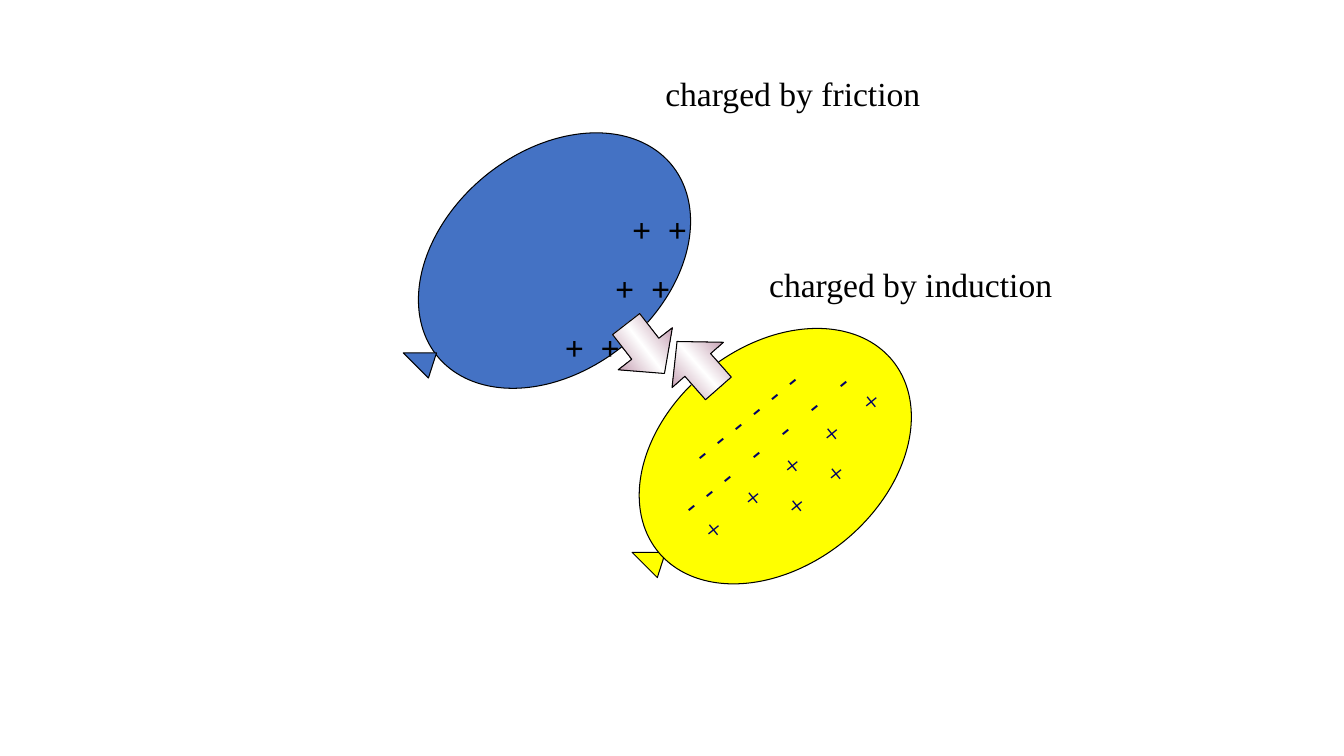
from copy import deepcopy
from pptx import Presentation
from pptx.dml.color import RGBColor
from pptx.enum.shapes import MSO_SHAPE
from pptx.enum.text import MSO_ANCHOR, PP_ALIGN
from pptx.util import Inches, Pt

OVAL, ARROW = MSO_SHAPE.OVAL, MSO_SHAPE.RIGHT_ARROW
MIDDLE, CENTER = MSO_ANCHOR.MIDDLE, PP_ALIGN.CENTER
FACE = "Times New Roman"
BLUE, YELLOW, BLACK, NAVY = "4472C4", "FFFF00", "000000", "000066"
MAUVE, WHITE = "954F72", "FFFFFF"
SIZE = 3, 2.17
TILT = 320.8

# Rows hold (text, letter spacing) runs and a left indent, in points.
PLUSES = [([("+ +", 3)], indent) for indent in (72, 60, 24)]
INDUCED = [
    ([("- - - - - -", 2.5)], 2.5),
    ([("- - ", 2.5), ("- - - - -", 7.5)], 0),
    ([("+ + + + +", 10)], 10),
    ([("+ +", 10)], 15),
]


def color(code):
    return RGBColor.from_string(code)


def outline(shape):
    shape.shadow.inherit = False
    shape.line.color.rgb = color(BLACK)
    shape.line.width = Pt(0.75)


def paint(shape, code):
    outline(shape)
    shape.fill.solid()
    shape.fill.fore_color.rgb = color(code)


def write(frame, rows, size, code, bold=False, gap=0, align=None):
    for i, (runs, indent) in enumerate(rows):
        para = frame.add_paragraph() if i else frame.paragraphs[0]
        para.font.size, para.font.name = Pt(size), FACE
        para.font.bold, para.font.color.rgb = bold, color(code)
        para.alignment = align
        if i and gap:
            para.space_before = Pt(gap)
        props = para._p.get_or_add_pPr()
        props.set("marL", str(Pt(indent)))
        props.set("indent", "0")
        for text, space in runs:
            run = para.add_run()
            run.text = text
            if space:
                run._r.get_or_add_rPr().set("spc", str(int(space * 100)))


def note(slide, box, rows, **style):
    frame = slide.shapes.add_textbox(*map(Inches, box)).text_frame
    frame.word_wrap = True
    write(frame, rows, 24, BLACK, **style)


def knot(slide, left, top, code):
    pen = slide.shapes.build_freeform(
        Inches(left + 0.33), Inches(top), scale=1.0)
    pen.add_line_segments(
        [(Inches(left), Inches(top)), (Inches(left + 0.25), Inches(top + 0.25))],
        close=True)
    paint(pen.convert_to_shape(), code)


def balloon(slide, left, top, code):
    body = slide.shapes.add_shape(OVAL, *map(Inches, (left, top, *SIZE)))
    body.rotation = TILT
    paint(body, code)
    return body


def arrow(slide, left, top, turn):
    shape = slide.shapes.add_shape(
        ARROW, *map(Inches, (left, top, 0.62, 0.68)))
    shape.rotation = turn
    outline(shape)
    fill = shape.fill
    fill.gradient()
    fill.gradient_angle = 90
    stops = shape._element.spPr.gradFill.gsLst
    stops.insert(1, deepcopy(stops[0]))
    for stop, code, share in zip(
            fill.gradient_stops, (MAUVE, WHITE, MAUVE), (0, 0.5, 1)):
        stop.color.rgb = color(code)
        stop.position = share


def rubbed(slide, left, top):
    """Balloon charged by friction, with its plus signs and label."""
    balloon(slide, left, top, BLUE)
    knot(slide, left, top + 2, BLUE)
    note(slide, (left + 1.17, top + 0.52, 1.75, 1.72), PLUSES,
         bold=True, gap=13.5)
    note(slide, (left + 2.5, top - 0.83, 3.75, 0.5),
         [([("charged by friction", 0)], 0)])


def induced(slide, left, top):
    """Balloon charged by induction, with its split charges and label."""
    knot(slide, left + 0.08, top + 2.04, YELLOW)
    frame = balloon(slide, left, top, YELLOW).text_frame
    frame.word_wrap = False
    frame.vertical_anchor = MIDDLE
    write(frame, INDUCED, 20, NAVY, align=CENTER)
    note(slide, (left + 1.34, top - 0.87, 3.75, 0.5),
         [([("charged by induction", 0)], 0)])


def main():
    deck = Presentation()
    deck.slide_width, deck.slide_height = Inches(13.33), Inches(7.5)
    slide = deck.slides.add_slide(deck.slide_layouts[6])
    rubbed(slide, 4, 1.5)
    induced(slide, 6.19, 3.44)
    arrow(slide, 6.09, 3.12, 52.2)
    arrow(slide, 6.61, 3.28, 228.6)
    deck.save("out.pptx")


if __name__ == "__main__":
    main()
